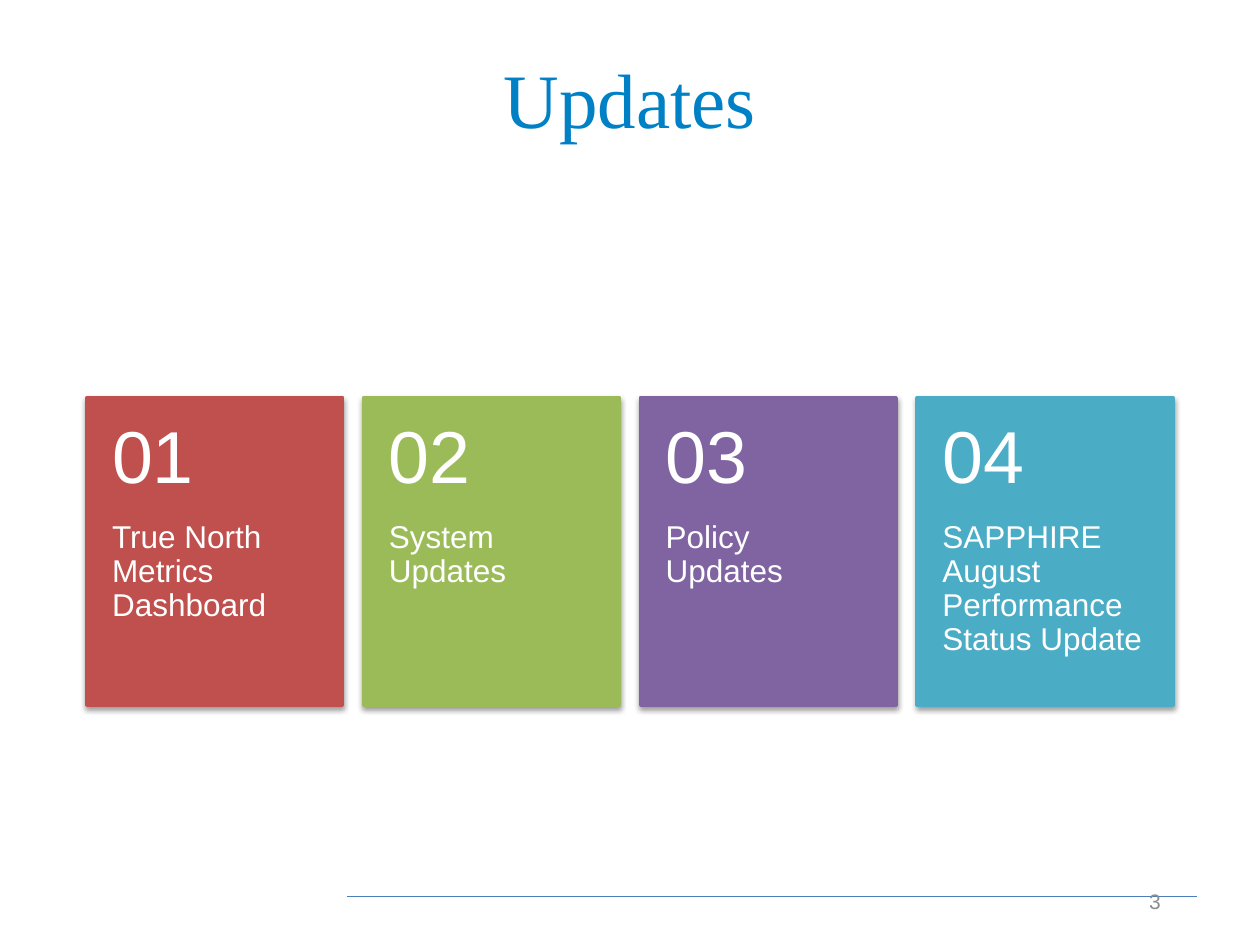
import pptx
import pptx.util
from lxml import etree
from pptx.dml.color import RGBColor
from pptx.enum.shapes import MSO_CONNECTOR, MSO_SHAPE
from pptx.enum.text import MSO_ANCHOR, MSO_AUTO_SIZE, PP_ALIGN
from pptx.oxml.ns import qn
from pptx.util import Cm, Pt

# Content
TITLE = "Updates"
PAGE = "3"
CARDS = [
    ("01", "True North Metrics Dashboard", RGBColor(0xC0, 0x50, 0x4D)),
    ("02", "System Updates", RGBColor(0x9B, 0xBB, 0x59)),
    ("03", "Policy Updates", RGBColor(0x80, 0x64, 0xA2)),
    ("04", "SAPPHIRE August Performance Status Update",
     RGBColor(0x4B, 0xAC, 0xC6)),
]

# Colours
BLUE = RGBColor(0x00, 0x81, 0xC6)
RULE = RGBColor(0x4B, 0x7E, 0xBC)
GREY = RGBColor(0x8C, 0x8C, 0x8C)
WHITE = RGBColor(0xFF, 0xFF, 0xFF)

# Card grid, in cm
LEFT, TOP, WIDTH = 1.75, 8.02, 21.9
CARD_W, CARD_H, NUMBER_H = 5.16, 6.2, 2.48
STEP = (WIDTH - CARD_W) / (len(CARDS) - 1)


def write(sp, text, size, color, margins, font="Arial",
          anchor=MSO_ANCHOR.TOP, align=PP_ALIGN.LEFT, spacing=0.9):
    """Fill a shape with one paragraph; margins are left, top, right, bottom in cm."""
    tf = sp.text_frame
    tf.word_wrap = True
    tf.auto_size = MSO_AUTO_SIZE.NONE
    tf.vertical_anchor = anchor
    tf.margin_left, tf.margin_top, tf.margin_right, tf.margin_bottom = map(Cm, margins)
    p = tf.paragraphs[0]
    p.text = text
    p.alignment = align
    p.line_spacing = spacing
    p.font.name, p.font.size = font, Pt(size)
    p.font.color.rgb = color


def add_text(s, left, top, width, height, *args, **kwargs):
    sp = s.shapes.add_textbox(Cm(left), Cm(top), Cm(width), Cm(height))
    write(sp, *args, **kwargs)


def set_shadow(sp):
    """Soft black shadow straight below the shape."""
    sp.shadow.inherit = False
    effects = sp._element.spPr.find(qn("a:effectLst"))
    shadow = etree.SubElement(effects, qn("a:outerShdw"), blurRad=str(Pt(3.1)),
                              dist=str(Pt(1.6)), dir="5400000", rotWithShape="0")
    black = etree.SubElement(shadow, qn("a:srgbClr"), val="000000")
    etree.SubElement(black, qn("a:alpha"), val="38000")


def add_card(s, left, number, label, color):
    sp = s.shapes.add_shape(MSO_SHAPE.RECTANGLE, Cm(left), Cm(TOP),
                            Cm(CARD_W), Cm(CARD_H))
    sp.fill.solid()
    sp.fill.fore_color.rgb = color
    sp.line.color.rgb = color
    sp.line.width = Pt(2)
    set_shadow(sp)
    add_text(s, left, TOP + NUMBER_H, CARD_W, CARD_H - NUMBER_H,
             label, 18, WHITE, (0.51, 0, 0.51, 0.91))
    add_text(s, left, TOP, CARD_W, NUMBER_H,
             number, 42, WHITE, (0.51, 0.46, 0.51, 0.46), anchor=MSO_ANCHOR.MIDDLE)


def main():
    prs = pptx.Presentation()
    prs.slide_width, prs.slide_height = Cm(25.4), Cm(19.05)
    s = prs.slides.add_slide(prs.slide_layouts[5])

    # Footer rule
    rule = s.shapes.add_connector(MSO_CONNECTOR.STRAIGHT,
                                  Cm(6.99), Cm(18.08), Cm(24.13), Cm(18.08))
    rule.line.color.rgb = RULE
    rule.line.width = Pt(0.75)
    etree.SubElement(rule._element.spPr, qn("a:effectLst"))

    # Title
    title = s.shapes.title
    title.left, title.top, title.width, title.height = map(Cm, (LEFT, 1.02, WIDTH, 3.68))
    write(title, TITLE, 44, BLUE, (0.25, 0.23, 0.25, 0.13),
          font="Times New Roman", align=PP_ALIGN.CENTER)

    # Page number
    add_text(s, 17.93, 17.65, 5.72, 1.02, PAGE, 12, GREY, (0.25, 0.13, 0.25, 0.13),
             anchor=MSO_ANCHOR.MIDDLE, align=PP_ALIGN.RIGHT, spacing=1.0)

    # Numbered cards
    for i, card in enumerate(CARDS):
        add_card(s, LEFT + i * STEP, *card)

    prs.save("out.pptx")


if __name__ == "__main__":
    main()
